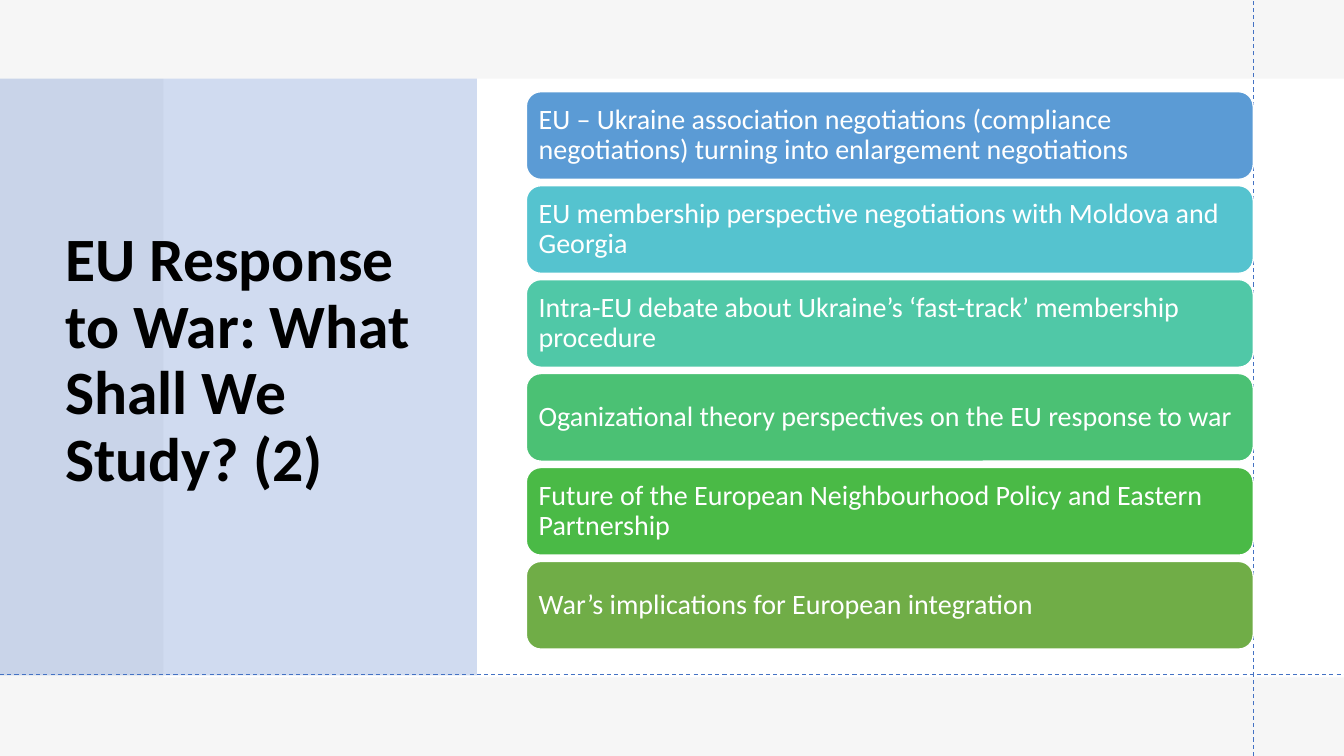
from lxml.etree import SubElement as Sub
from pptx import Presentation
from pptx.dml.color import RGBColor
from pptx.enum.dml import MSO_LINE as Dash
from pptx.enum.shapes import MSO_CONNECTOR as Link, MSO_SHAPE as Kind
from pptx.enum.text import MSO_ANCHOR as Anchor, PP_ALIGN as Align
from pptx.oxml.ns import qn
from pptx.util import Pt

SCALE = 9144  # EMU per px, 100 px to the inch
WIDE, HIGH = 1333, 750
WHITE, GREY, BLUE = "FFFFFF", "E7E6E6", "4472C4"
TITLE = "EU Response to War: What Shall We Study? (2)"
TOPICS = [
    ("5B9BD5", "EU – Ukraine association negotiations (compliance "
               "negotiations) turning into enlargement negotiations"),
    ("55C3CF", "EU membership perspective negotiations with Moldova and Georgia"),
    ("50C8A7", "Intra-EU debate about Ukraine’s ‘fast-track’ membership procedure"),
    ("4BC174", "Oganizational theory perspectives on the EU response to war"),
    ("4ABA46", "Future of the European Neighbourhood Policy and Eastern Partnership"),
    ("70AD47", "War’s implications for European integration"),
]


def px(*sizes):
    return [round(size * SCALE) for size in sizes]


def tint(code):
    return RGBColor.from_string(code)


def block(slide, kind, box, fill, alpha=100):
    shape = slide.shapes.add_shape(kind, *px(*box))
    shape.shadow.inherit = False
    shape.fill.solid()
    shape.fill.fore_color.rgb = tint(fill)
    shape.line.fill.background()
    if alpha < 100:
        color = shape.fill._xPr.find(qn("a:solidFill"))[0]
        Sub(color, qn("a:alpha"), val=str(alpha * 1000))
    return shape


def write(shape, text, size, color, bold=False, after=0):
    frame = shape.text_frame
    frame.word_wrap = True
    frame.vertical_anchor = Anchor.MIDDLE
    para = frame.paragraphs[0]
    para.alignment = Align.LEFT
    para.line_spacing = 0.9
    para.space_after = Pt(after)
    run = para.add_run()
    run.text = text
    font = run.font
    font.name, font.size, font.bold = "Calibri", Pt(size), bold
    font.color.rgb = tint(color)


def guide(slide, *ends):
    line = slide.shapes.add_connector(Link.STRAIGHT, *px(*ends))
    line.line.color.rgb = tint(BLUE)
    line.line.width = Pt(0.75)
    line.line.dash_style = Dash.DASH
    Sub(line._element.spPr, qn("a:effectLst"))


def backdrop(slide, box):
    left, top, width, height = box
    block(slide, Kind.RECTANGLE, box, WHITE)
    block(slide, Kind.RECTANGLE, box, GREY, 35)
    # White band, set in from the left
    block(slide, Kind.RECTANGLE, (left + 162, top + 78, width - 162, 594), WHITE)


def panel(slide, box):
    left, top, width, height = box
    block(slide, Kind.RECTANGLE, box, BLUE, 25)
    label = slide.shapes.add_textbox(*px(left + 55, top - 4, width - 78, height - 23))
    write(label, TITLE, 44, "000000", bold=True, after=6)


def guides(slide, box):
    left, top, width, height = box
    guide(slide, left + 1243, top + height, left + 1243, top)
    guide(slide, left, top + 669, left + width, top + 669)


def cards(slide, box, tall=87):
    left, top, width, height = box
    step = (height - tall) / (len(TOPICS) - 1)
    for row, (fill, text) in enumerate(TOPICS):
        card = block(slide, Kind.ROUNDED_RECTANGLE,
                     (left, top + row * step, width, tall), fill)
        card.line.color.rgb = tint(WHITE)
        card.line.width = Pt(1)
        frame = card.text_frame
        # The rounded corners add 4 px to each inset
        frame.margin_left, frame.margin_right = px(8, 8)
        frame.margin_top, frame.margin_bottom = px(8, 8)
        write(card, text, 20, WHITE)


def main():
    deck = Presentation()
    deck.slide_width, deck.slide_height = px(WIDE, HIGH)
    slide = deck.slides.add_slide(deck.slide_layouts[6])
    page = (0, 0, WIDE, HIGH)
    backdrop(slide, page)
    panel(slide, (0, 78, 473, 592))
    guides(slide, page)
    cards(slide, (522, 91, 721, 553))
    deck.save("out.pptx")


if __name__ == "__main__":
    main()
